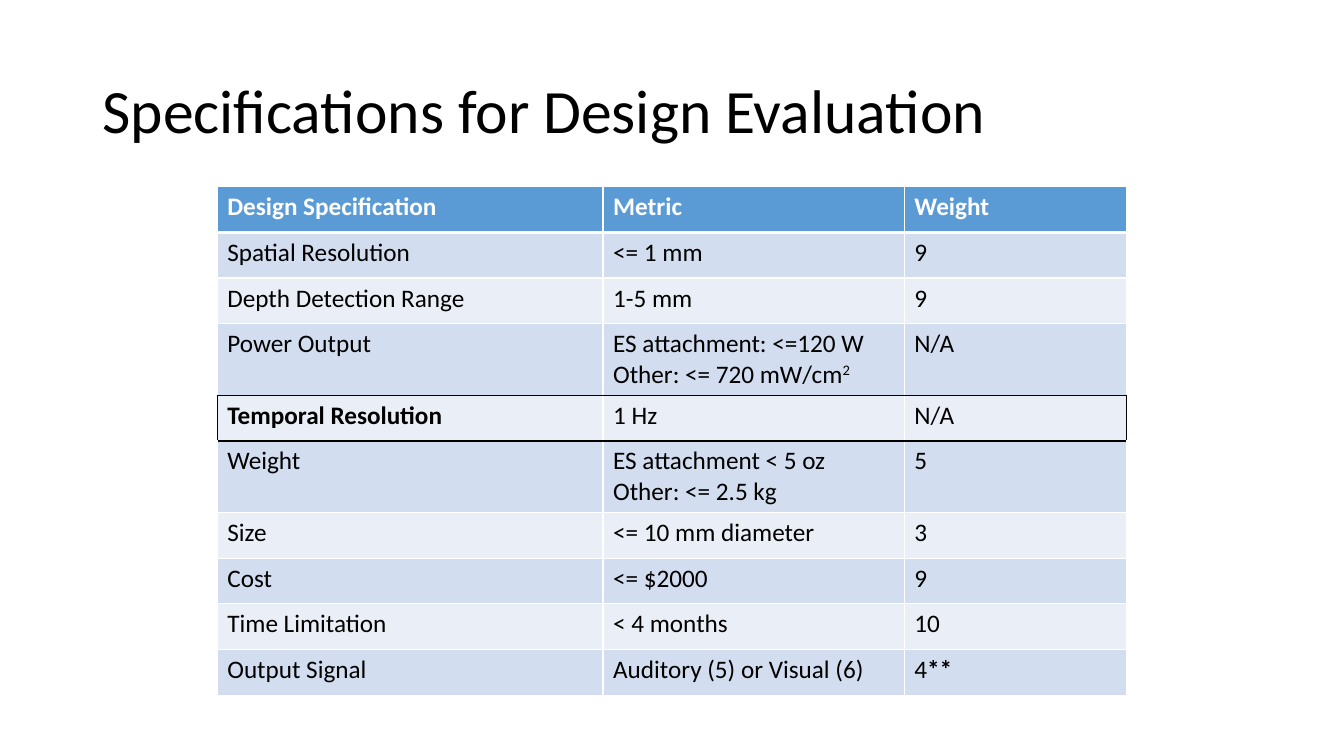
from lxml import etree
from pptx import Presentation
from pptx.dml.color import RGBColor
from pptx.enum import text
from pptx.oxml import ns
from pptx.util import Pt

FONT = "Calibri"
BLACK = RGBColor(0x00, 0x00, 0x00)
WHITE = RGBColor(0xFF, 0xFF, 0xFF)
HEADER_BLUE = RGBColor(0x5B, 0x9B, 0xD5)
BAND_DARK = RGBColor(0xD2, 0xDE, 0xEF)
BAND_LIGHT = RGBColor(0xEA, 0xEF, 0xF7)

SPECIFICATIONS = [
    ("Design Specification", "Metric", "Weight"),
    ("Spatial Resolution", "<= 1 mm", "9"),
    ("Depth Detection Range", "1-5 mm", "9"),
    ("Power Output", "ES attachment: <=120 W\nOther: <= 720 mW/cm", "N/A"),
    ("Temporal Resolution", "1 Hz", "N/A"),
    ("Weight", "ES attachment < 5 oz\nOther: <= 2.5 kg", "5"),
    ("Size", "<= 10 mm diameter", "3"),
    ("Cost", "<= $2000", "9"),
    ("Time Limitation", "< 4 months", "10"),
    ("Output Signal", "Auditory (5) or Visual (6)", "4"),
]
COLUMN_WIDTHS = [275.6, 215.2, 158.6]
ROW_HEIGHT = 32.6
POWER, TEMPORAL, OUTPUT = 3, 4, 9  # rows with special formatting


def format_run(run, size, color, bold=False):
    run.font.name = FONT
    run.font.size = Pt(size)
    run.font.color.rgb = color
    run.font.bold = bold


def add_title(slide, wording):
    title = slide.shapes.title
    title.left, title.top, title.width, title.height = Pt(66), Pt(28.8), Pt(828), Pt(104.4)
    frame = title.text_frame
    frame.text = wording
    frame.vertical_anchor = text.MSO_ANCHOR.MIDDLE
    heading = frame.paragraphs[0]
    heading.alignment = text.PP_ALIGN.LEFT
    heading.line_spacing = 0.9
    format_run(heading.runs[0], 44, BLACK)


def set_borders(cell, borders):
    """Put (color, width) borders, in left, right, top, bottom order, before the fill."""
    properties = cell._tc.get_or_add_tcPr()
    for index, (side, (color, width)) in enumerate(zip("LRTB", borders)):
        line = etree.Element(ns.qn(f"a:ln{side}"), w=str(Pt(width)))
        fill = etree.SubElement(line, ns.qn("a:solidFill"))
        etree.SubElement(fill, ns.qn("a:srgbClr"), val=str(color))
        properties.insert(index, line)


def cell_borders(row, column):
    left = BLACK if row == TEMPORAL and column == 0 else WHITE
    right = BLACK if row == TEMPORAL and column == len(COLUMN_WIDTHS) - 1 else WHITE
    top = BLACK if row in (TEMPORAL, TEMPORAL + 1) else WHITE
    bottom = BLACK if row in (TEMPORAL - 1, TEMPORAL) else WHITE
    return [(left, 1), (right, 1), (top, 3 if row == 1 else 1), (bottom, 3 if row == 0 else 1)]


def fill_cell(cell, row, column, wording):
    header = row == 0
    cell.text_frame.text = wording
    for paragraph in cell.text_frame.paragraphs:
        for run in paragraph.runs:
            format_run(run, 18, WHITE if header else BLACK,
                       bold=header or (row == TEMPORAL and column == 0))
    cell.fill.solid()
    cell.fill.fore_color.rgb = HEADER_BLUE if header else (BAND_LIGHT, BAND_DARK)[row % 2]
    set_borders(cell, cell_borders(row, column))


def append_run(cell, wording, bold=False):
    run = cell.text_frame.paragraphs[-1].add_run()
    run.text = wording
    format_run(run, 18, BLACK, bold)
    return run


def add_specifications(slide):
    table = slide.shapes.add_table(
        len(SPECIFICATIONS), len(COLUMN_WIDTHS), Pt(155.2), Pt(133.4),
        Pt(sum(COLUMN_WIDTHS)), Pt(ROW_HEIGHT * len(SPECIFICATIONS))).table
    for column, width in zip(table.columns, COLUMN_WIDTHS):
        column.width = Pt(width)
    for row, entries in enumerate(SPECIFICATIONS):
        table.rows[row].height = Pt(ROW_HEIGHT)
        for column, wording in enumerate(entries):
            fill_cell(table.cell(row, column), row, column, wording)

    # Superscript unit and bold footnote mark
    square = append_run(table.cell(POWER, 1), "2")
    square._r.get_or_add_rPr().set("baseline", "30000")
    append_run(table.cell(OUTPUT, 2), "**", bold=True)


def main():
    presentation = Presentation()
    presentation.slide_width, presentation.slide_height = Pt(960), Pt(540)
    slide = presentation.slides.add_slide(presentation.slide_layouts[5])
    add_title(slide, "Specifications for Design Evaluation")
    add_specifications(slide)
    presentation.save("out.pptx")


if __name__ == "__main__":
    main()
